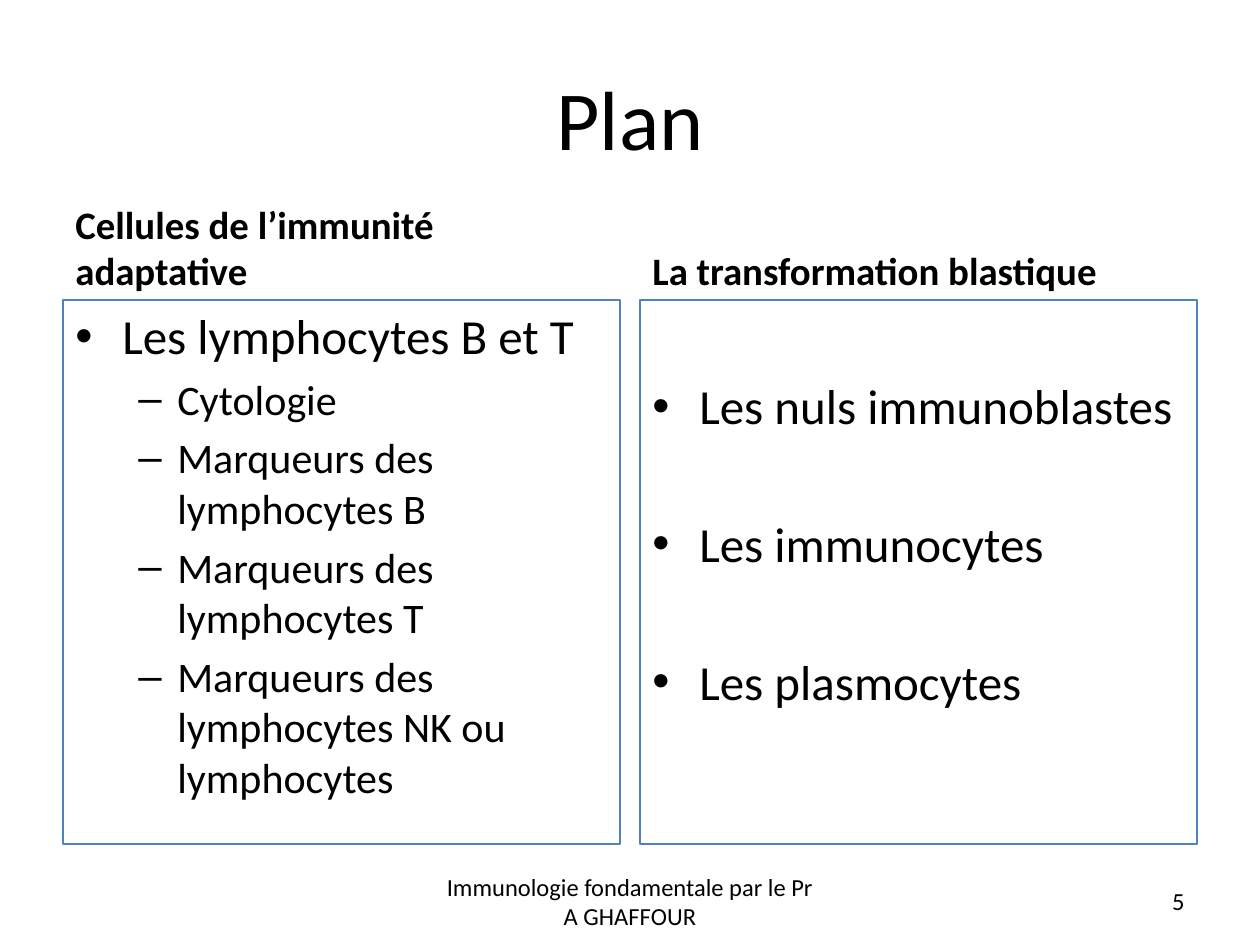
from lxml import etree
from pptx import Presentation
from pptx.dml.color import RGBColor
from pptx.enum.shapes import MSO_SHAPE
from pptx.enum.text import MSO_ANCHOR, PP_ALIGN
from pptx.oxml.ns import qn
from pptx.util import Emu, Pt

BLACK = RGBColor(0x00, 0x00, 0x00)
BLUE = RGBColor(0x4F, 0x81, 0xBD)
FONT = "Calibri"
RECTANGLE = MSO_SHAPE.RECTANGLE
TOP, MIDDLE, BOTTOM = MSO_ANCHOR.TOP, MSO_ANCHOR.MIDDLE, MSO_ANCHOR.BOTTOM
LEFT, CENTER, RIGHT = PP_ALIGN.LEFT, PP_ALIGN.CENTER, PP_ALIGN.RIGHT

PAGE_WIDTH, PAGE_HEIGHT = 1260, 945
MARGIN = 63
COLUMN_WIDTH, COLUMN_STEP = 557, 577
HEADING_TOP, HEADING_HEIGHT = 212, 88
LIST_TOP, LIST_HEIGHT = 300, 544
FOOTER_TOP, FOOTER_HEIGHT = 876, 50
LEVELS = [
    {"size": 28, "margin": 47, "hanging": 47, "bullet": "•"},
    {"size": 24, "margin": 102, "hanging": 39, "bullet": "–"},
]

TITLE = "Plan"
FOOTER = "Immunologie fondamentale par le Pr A GHAFFOUR"
PAGE_NUMBER = "5"
COLUMNS = [
    {
        "heading": "Cellules de l’immunité adaptative",
        "inset": 6,
        "gap": None,
        "items": [
            (0, "Les lymphocytes B et T"),
            (1, "Cytologie"),
            (1, "Marqueurs des lymphocytes B"),
            (1, "Marqueurs des lymphocytes T"),
            (1, "Marqueurs des lymphocytes NK ou lymphocytes"),
        ],
    },
    {
        "heading": "La transformation blastique",
        "inset": 76,
        "gap": 45,
        "items": [
            (0, "Les nuls immunoblastes"),
            (0, "Les immunocytes"),
            (0, "Les plasmocytes"),
        ],
    },
]


def px(length):
    return Emu(round(length * 914400 / 126))


def add_span(para, text, size, bold=False):
    span = para.add_run()
    span.text = text
    span.font.name = FONT
    span.font.size = Pt(size)
    span.font.bold = bold
    span.font.color.rgb = BLACK


def add_text(page, place, text, size, anchor, align, bold=False):
    box = page.shapes.add_textbox(*map(px, place))
    frame = box.text_frame
    frame.word_wrap = True
    frame.vertical_anchor = anchor
    para = frame.paragraphs[0]
    para.alignment = align
    add_span(para, text, size, bold)


def set_bullet(para, level):
    properties = para._p.get_or_add_pPr()
    properties.set("marL", str(px(level["margin"])))
    properties.set("indent", str(-px(level["hanging"])))
    etree.SubElement(properties, qn("a:buFont"), typeface="Arial")
    etree.SubElement(properties, qn("a:buChar"), char=level["bullet"])


def add_list(page, left, column):
    box = page.shapes.add_shape(
        RECTANGLE, *map(px, (left, LIST_TOP, COLUMN_WIDTH, LIST_HEIGHT))
    )
    box.shadow.inherit = False
    box.fill.background()
    box.line.color.rgb = BLUE
    box.line.width = Pt(0.75)
    frame = box.text_frame
    frame.word_wrap = True
    frame.vertical_anchor = TOP
    frame.margin_top = px(column["inset"])
    for index, (depth, text) in enumerate(column["items"]):
        level = LEVELS[depth]
        para = frame.add_paragraph() if index else frame.paragraphs[0]
        para.alignment = LEFT
        para.level = depth
        gap = column["gap"] or level["size"] * 0.2
        para.space_before = Pt(gap if index else 0)
        set_bullet(para, level)
        add_span(para, text, level["size"])


def main():
    deck = Presentation()
    deck.slide_width, deck.slide_height = px(PAGE_WIDTH), px(PAGE_HEIGHT)
    page = deck.slides.add_slide(deck.slide_layouts[6])

    title_place = (MARGIN, 38, PAGE_WIDTH - 2 * MARGIN, 157)
    add_text(page, title_place, TITLE, 48, MIDDLE, CENTER)

    for index, column in enumerate(COLUMNS):
        left = MARGIN + index * COLUMN_STEP
        heading_place = (left, HEADING_TOP, COLUMN_WIDTH, HEADING_HEIGHT)
        add_text(page, heading_place, column["heading"], 22.2, BOTTOM, LEFT, True)
        add_list(page, left, column)

    for left, width, text, align in (
        (430, 400, FOOTER, CENTER),
        (903, 294, PAGE_NUMBER, RIGHT),
    ):
        place = (left, FOOTER_TOP, width, FOOTER_HEIGHT)
        add_text(page, place, text, 14, MIDDLE, align)

    deck.save("out.pptx")


if __name__ == "__main__":
    main()
